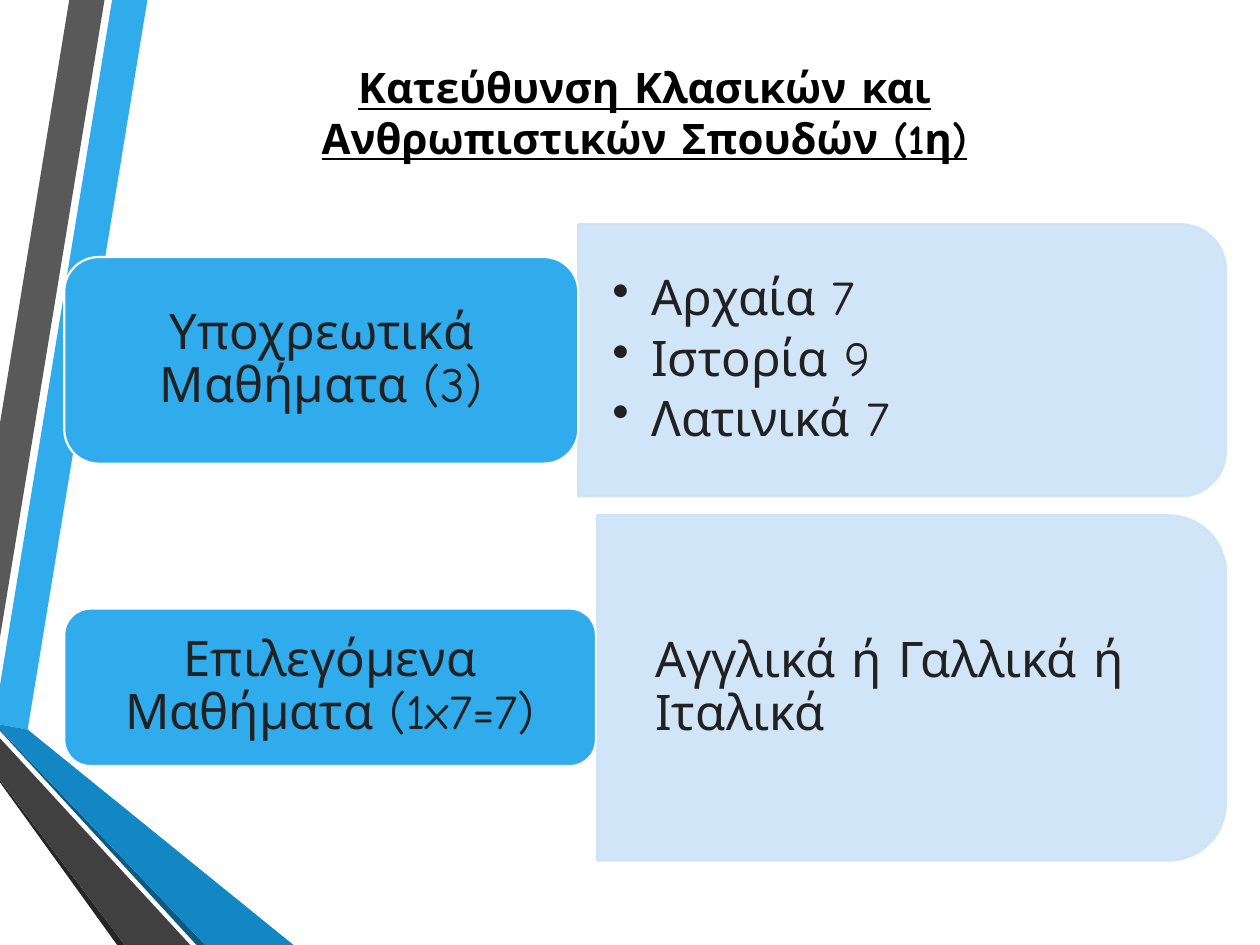
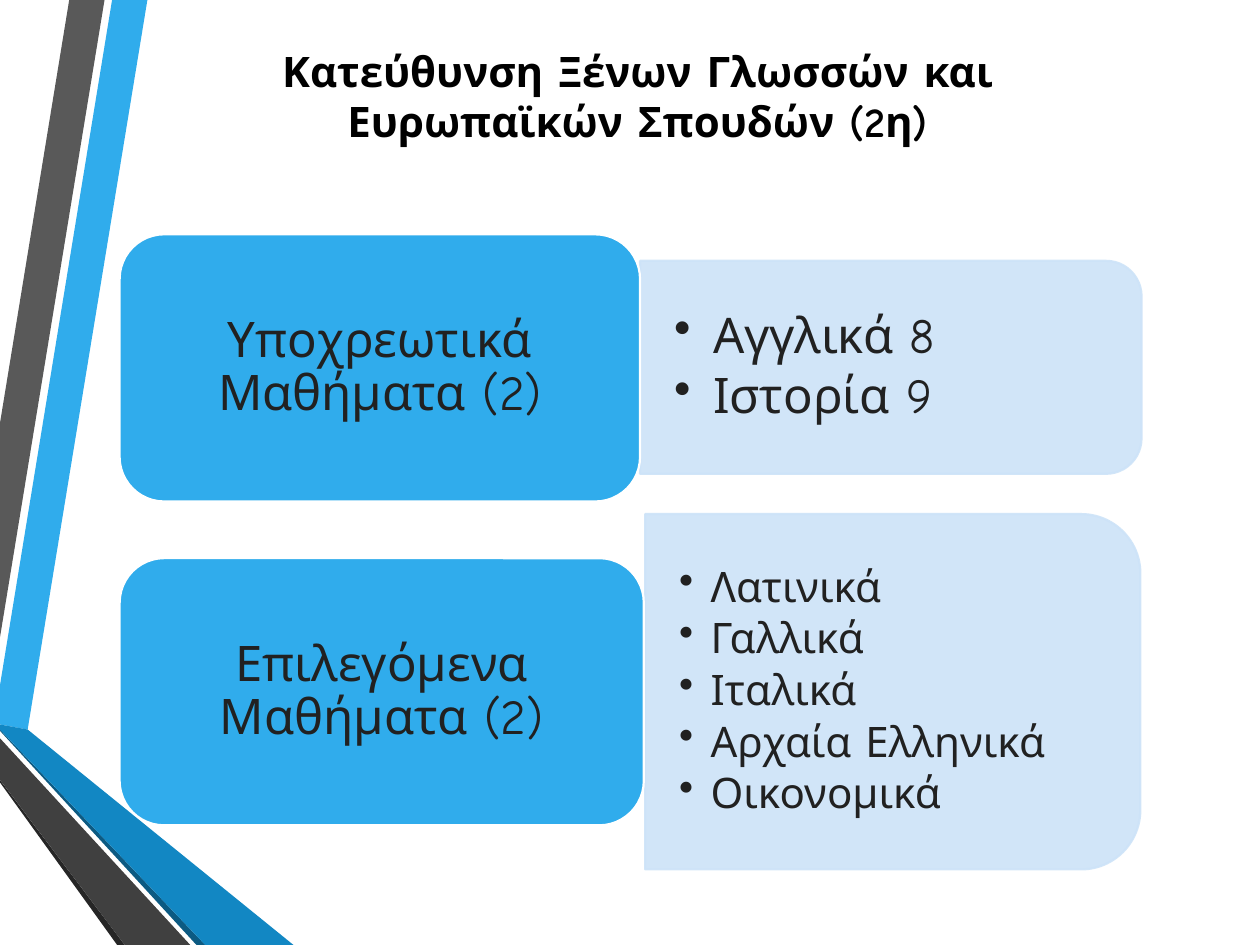
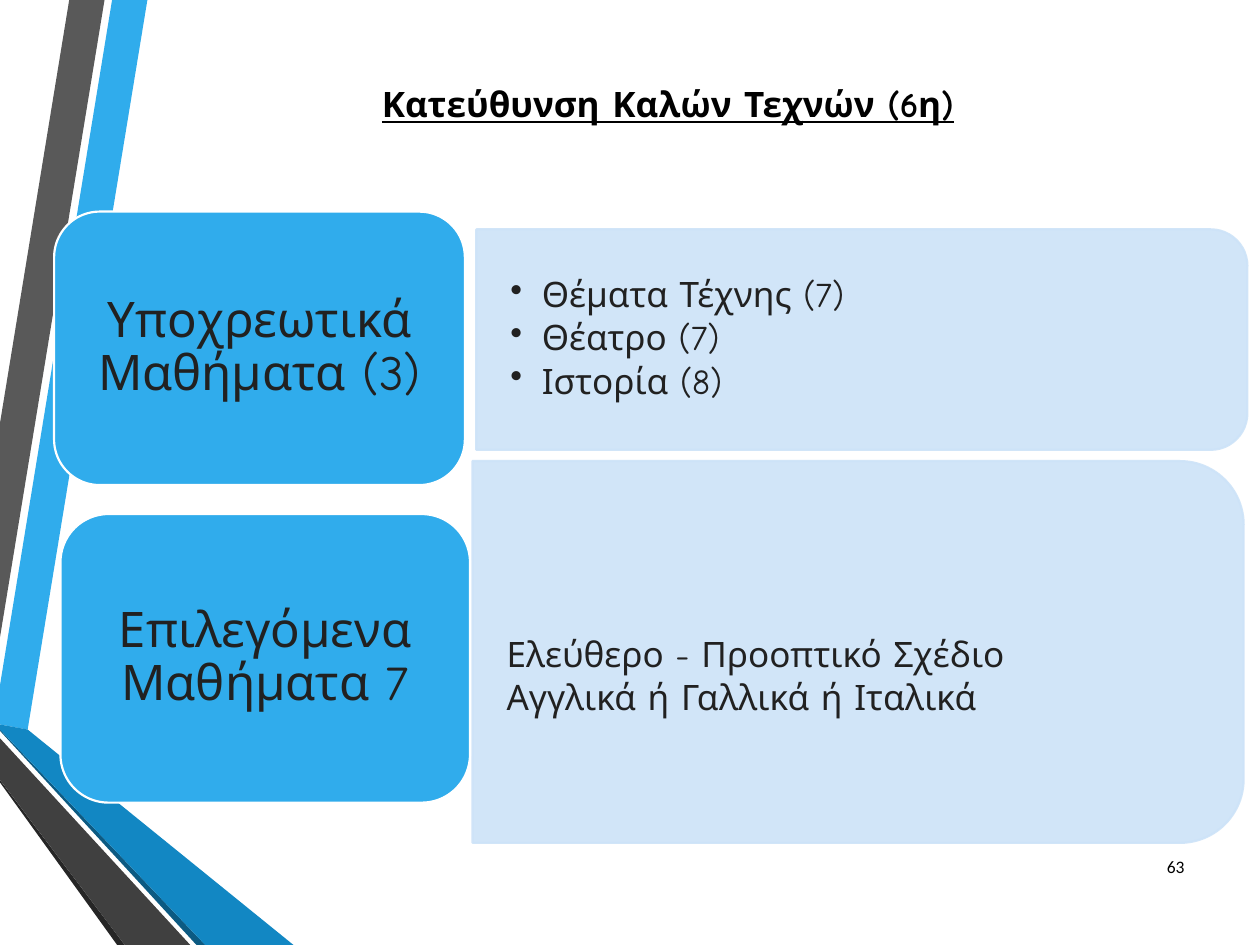
import pptx
import pptx.util
import pptx.dml.color
import pptx.enum.shapes
import pptx.enum.text
import pptx.oxml
import pptx.oxml.ns
import lxml.etree

Inches = pptx.util.Inches
Pt = pptx.util.Pt
Kind = pptx.enum.shapes.MSO_SHAPE
Align = pptx.enum.text.PP_ALIGN
Middle = pptx.enum.text.MSO_ANCHOR.MIDDLE
qn = pptx.oxml.ns.qn

BLUE, PALE, INK = "30ACEC", "CDE3F8", "212121"
FONT = "Comic Neue"

BANDS = [
    ("30ACEC", [(0, 5.44), (0, 5.75), (0.22, 5.79), (1.17, 0), (0.89, 0)]),
    ("595959", [(0.83, 0), (0.55, 0), (0, 3.36), (0, 5.06)]),
    ("262626", [(0, 6.19), (0, 6.21), (0.93, 7.5), (0.99, 7.5)]),
    ("0C5A82", [(0, 5.79), (0, 5.8), (1.56, 7.5), (1.63, 7.5)]),
    ("1287C3", [(0, 5.79), (1.63, 7.5), (2.33, 7.5), (0.22, 5.79), (0, 5.75)]),
    ("404040", [(0, 6.19), (0.99, 7.5), (1.51, 7.5), (0, 5.86)]),
]

SLIDES = [
    {
        "title": ("Κατεύθυνση Κλασικών και Ανθρωπιστικών Σπουδών (1η)",
                  (1.59, 0.17, 7.05, 1.44), 24, True),
        "rows": [
            {"card": (0.51, 2.04, 4.08, 1.64), "label": "Υποχρεωτικά Μαθήματα (3)",
             "panel": (4.59, 1.78, 5.14, 2.16), "size": 28, "hang": 0.31,
             "items": ["Αρχαία 7", "Ιστορία 9", "Λατινικά 7"]},
            {"card": (0.51, 4.83, 4.22, 1.25), "label": "Επιλεγόμενα Μαθήματα (1x7=7)",
             "panel": (4.74, 4.09, 4.99, 2.74), "size": 28, "left": 0.19,
             "items": ["Αγγλικά ή Γαλλικά ή Ιταλικά"]},
        ],
    },
    {
        "title": ("Κατεύθυνση Ξένων Γλωσσών και Ευρωπαϊκών Σπουδών (2η)",
                  (1.04, 0.04, 8.04, 1.44), 24, False),
        "rows": [
            {"card": (0.95, 1.86, 4.13, 2.12), "label": "Υποχρεωτικά Μαθήματα (2)",
             "panel": (5.08, 2.07, 3.98, 1.69), "size": 28, "hang": 0.31,
             "items": ["Αγγλικά 8", "Ιστορία 9"]},
            {"card": (0.95, 4.43, 4.16, 2.12), "label": "Επιλεγόμενα Μαθήματα (2)",
             "panel": (5.12, 4.08, 3.93, 2.82), "size": 24, "hang": 0.25,
             "items": ["Λατινικά", "Γαλλικά", "Ιταλικά", "Αρχαία Ελληνικά", "Οικονομικά"]},
        ],
    },
    {
        "title": ("Κατεύθυνση Καλών Τεχνών (6η)", (1.1, 0.07, 8.4, 1.5), 20, True),
        "number": "63",
        "rows": [
            {"card": (0.43, 1.68, 3.26, 2.17), "label": "Υποχρεωτικά Μαθήματα (3)",
             "panel": (3.78, 1.82, 6.12, 1.75), "size": 20, "hang": 0.25,
             "items": ["Θέματα Τέχνης (7)", "Θέατρο (7)", "Ιστορία (8)"]},
            {"card": (0.48, 4.08, 3.25, 2.29), "label": "Επιλεγόμενα Μαθήματα 7",
             "panel": (3.75, 3.66, 6.12, 3.03), "size": 20, "drop": 0.2,
             "items": ["Ελεύθερο - Προοπτικό Σχέδιο", "Αγγλικά ή Γαλλικά ή Ιταλικά"]},
        ],
    },
]


def tint(color, code):
    color.rgb = pptx.dml.color.RGBColor.from_string(code)


def style(frame, size, code, align, font=FONT, bold=False, line=False):
    frame.word_wrap = True
    frame.auto_size = pptx.enum.text.MSO_AUTO_SIZE.NONE
    frame.vertical_anchor = Middle
    for para in frame.paragraphs:
        para.alignment = align
        for run in para.runs:
            run.font.name = font
            run.font.size = Pt(size)
            run.font.bold = bold
            run.font.underline = line
            tint(run.font.color, code)


deck = pptx.Presentation()
deck.slide_width, deck.slide_height = Inches(10), Inches(7.5)
plain = deck.slide_layouts[5]
pages = [deck.slides.add_slide(plain) for _ in SLIDES]

for place, (code, dots) in enumerate(BANDS):
    dots = [(Inches(x), Inches(y)) for x, y in dots]
    pen = pages[0].shapes.build_freeform(*dots[0])
    pen.add_line_segments(dots[1:], close=True)
    band = pen.convert_to_shape()
    band.shadow.inherit = False
    band.fill.solid()
    tint(band.fill.fore_color, code)
    band.line.fill.background()
    plain.shapes._spTree.insert(2 + place, band._element)

for page, data in zip(pages, SLIDES):
    text, area, size, line = data["title"]
    title = page.shapes.title
    title.left, title.top, title.width, title.height = map(Inches, area)
    title.text_frame.text = text
    style(title.text_frame, size, "000000", Align.CENTER, bold=True, line=line)

    if "number" in data:
        box = page.shapes.add_textbox(*map(Inches, (9.03, 6.68, 0.47, 0.4)))
        box.text_frame.text = data["number"]
        style(box.text_frame, 10, "000000", Align.RIGHT, font="Calibri")

    for row in data["rows"]:
        x, y, w, h = row["panel"]
        turned = (x + (w - h) / 2, y + (h - w) / 2, h, w)
        panel = page.shapes.add_shape(Kind.ROUND_2_SAME_RECTANGLE, *map(Inches, turned))
        panel.rotation = 90
        card = page.shapes.add_shape(Kind.ROUNDED_RECTANGLE, *map(Inches, row["card"]))
        for shape, fill, edge in ((panel, PALE, PALE), (card, BLUE, "FFFFFF")):
            shape.shadow.inherit = False
            shape.fill.solid()
            tint(shape.fill.fore_color, fill)
            tint(shape.line.color, edge)
            shape.line.width = Pt(1.25)
        for color in panel._element.spPr.iter(qn("a:srgbClr")):
            lxml.etree.SubElement(color, qn("a:alpha")).set("val", "90000")

        frame = card.text_frame
        frame.text = row["label"]
        frame.margin_left = frame.margin_right = Inches(0.2)
        style(frame, 28, INK, Align.CENTER)
        frame.paragraphs[0].line_spacing = 0.9

        box = page.shapes.add_textbox(*map(Inches, (x, y + row.get("drop", 0), w - 0.1, h)))
        frame = box.text_frame
        frame.text = "\n".join(row["items"])
        frame.margin_left = frame.margin_right = Inches(0.27)
        frame.margin_top = frame.margin_bottom = Inches(0.14)
        style(frame, row["size"], INK, Align.LEFT)
        hang = row.get("hang", 0)
        for para in frame.paragraphs:
            para.line_spacing = 0.9
            para.space_after = Pt(0.15 * row["size"])
            props = para._p.get_or_add_pPr()
            props.set("marL", str(Inches(row.get("left", hang))))
            props.set("indent", str(-Inches(hang)))
            if hang:
                lxml.etree.SubElement(props, qn("a:buChar")).set("char", "•")

deck.save("out.pptx")
